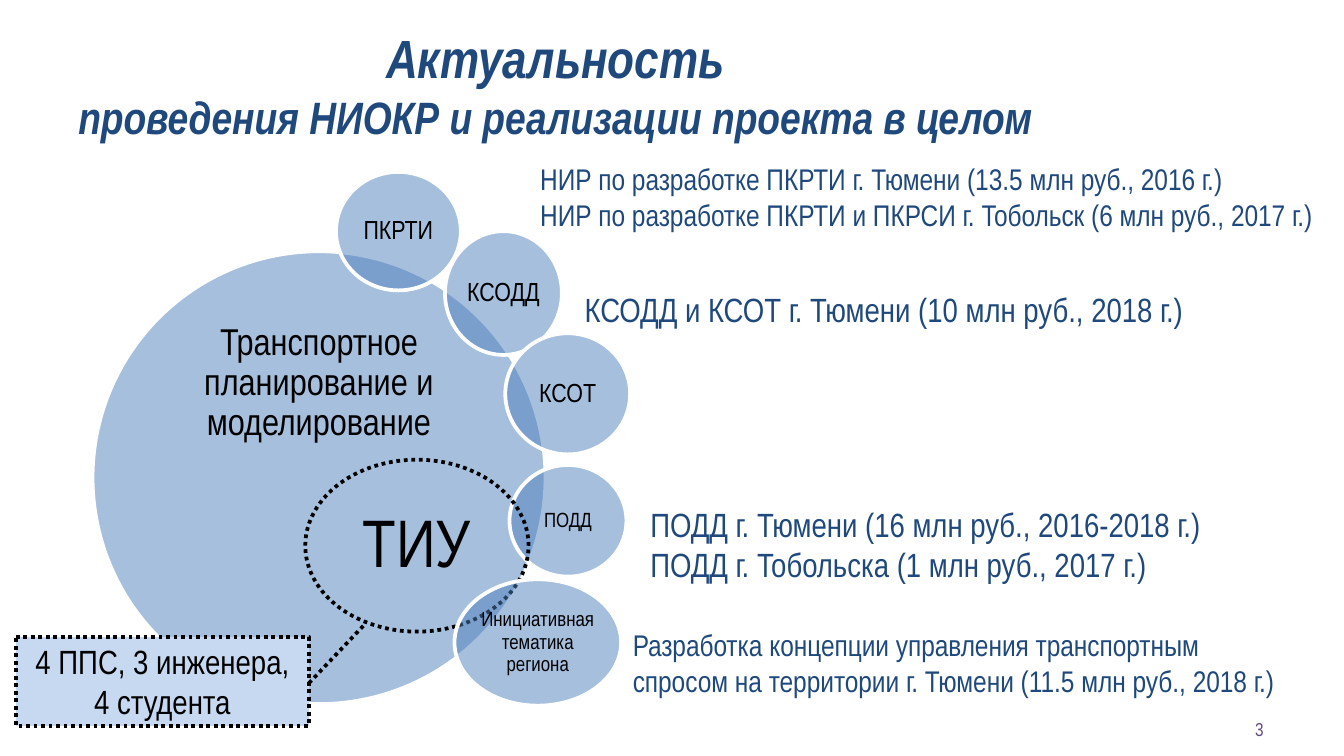
from pptx import Presentation
from pptx.dml.color import RGBColor
from pptx.enum import dml, shapes, text
from pptx.oxml.ns import qn
from pptx.util import Cm, Pt
from lxml import etree

NAVY, BLACK, WHITE = "1F497D", "000000", "FFFFFF"
BLUE, PALE, PURPLE = "4F81BD", "C6D9F1", "604A7B"
FONT = "Arial Narrow"

heading = [("Актуальность", 28.8), ("проведения НИОКР и реализации проекта в целом", 24.3)]
topics = [
    ("Транспортное планирование и моделирование", 20, (1.75, 4.75, 8.56, 8.56)),
    ("ПКРТИ", 14, (6.35, 3.25, 2.36, 2.24)),
    ("КСОДД", 14, (8.41, 4.37, 2.21, 2.34)),
    ("ПОДД", 11, (9.63, 8.79, 2.21, 2.11)),
    ("ТИУ", 36, (5.77, 8.69, 4.22, 3.25)),
    ("Инициативная тематика региона", 11, (8.59, 10.95, 3.15, 2.39)),
    ("КСОТ", 14, (9.55, 6.3, 2.36, 2.29)),
]
main_topic, university = topics[0][0], "ТИУ"
projects = [
    (["НИР по разработке ПКРТИ г. Тюмени (13.5 млн руб., 2016 г.)",
      "НИР по разработке ПКРТИ и ПКРСИ г. Тобольск (6 млн руб., 2017 г.)"],
     16, (9.96, 2.92, 15.82, 1.63)),
    (["КСОДД и КСОТ г. Тюмени (10 млн руб., 2018 г.)"], 18, (10.8, 5.33, 12.22, 1.02)),
    (["Разработка концепции управления транспортным",
      "спросом на территории г. Тюмени (11.5 млн руб., 2018 г.)"],
     16, (11.71, 11.73, 13.69, 1.63)),
    (["ПОДД г. Тюмени (16 млн руб., 2016-2018 г.)",
      "ПОДД г. Тобольска (1 млн руб., 2017 г.)"], 18, (12.04, 9.4, 11.25, 1.8)),
]
team = ("4 ППС, 3 инженера, 4 студента", 18, (0.3, 12.04, 5.54, 1.68))
team_pointer = (0.52, 1, -0.14, 1.19)
page_number = ("3", 10, (18.21, 13.41, 5.92, 0.76))


def rgb(value):
    return RGBColor.from_string(value)


def box(lengths):
    return [Cm(length) for length in lengths]


def write(frame, lines, size, color, align, anchor=text.MSO_ANCHOR.MIDDLE):
    frame.text = "\n".join(lines)
    frame.word_wrap = True
    frame.vertical_anchor = anchor
    for paragraph in frame.paragraphs:
        paragraph.alignment = align
        for run in paragraph.runs:
            run.font.name, run.font.size = FONT, Pt(size)
            run.font.color.rgb = rgb(color)


def add_figure(slide, preset, place, fill, line, dotted=False, alpha=None):
    figure = slide.shapes.add_shape(preset, *box(place))
    figure.shadow.inherit = False
    if fill:
        figure.fill.solid()
        figure.fill.fore_color.rgb = rgb(fill)
    else:
        figure.fill.background()
    if alpha:
        color = figure.fill._xPr.find(qn("a:solidFill"))[0]
        etree.SubElement(color, qn("a:alpha")).set("val", str(alpha * 1000))
    figure.line.color.rgb = rgb(line)
    figure.line.width = Pt(2)
    if dotted:
        figure.line.dash_style = dml.MSO_LINE.ROUND_DOT
    return figure


def add_heading(slide):
    title = slide.shapes.title
    title.left, title.top, title.width, title.height = box((0, 0.33, 21, 2.51))
    frame = title.text_frame
    write(frame, ["\v".join(line for line, _ in heading)], heading[0][1], NAVY,
          text.PP_ALIGN.CENTER)
    for run, (_, size) in zip(frame.paragraphs[0].runs, heading):
        run.font.size = Pt(size)
        run.font.bold = run.font.italic = True


def add_topic(slide, name, size, place):
    outlined = name == university
    circle = add_figure(slide, shapes.MSO_SHAPE.OVAL, place,
                        None if outlined else BLUE, BLACK if outlined else WHITE,
                        dotted=outlined, alpha=None if outlined else 50)
    frame = circle.text_frame
    frame.margin_left = frame.margin_right = frame.margin_top = frame.margin_bottom = 0
    anchor = text.MSO_ANCHOR.TOP if name == main_topic else text.MSO_ANCHOR.MIDDLE
    write(frame, [name], size, BLACK, text.PP_ALIGN.CENTER, anchor)
    frame.paragraphs[0].line_spacing = 0.9
    if name == main_topic:
        frame.margin_top = Cm(0.1)


def add_note(slide, lines, size, place, color, align, anchor):
    note = slide.shapes.add_textbox(*box(place))
    write(note.text_frame, lines, size, color, align, anchor)


def main():
    deck = Presentation()
    deck.slide_width, deck.slide_height = Cm(25.4), Cm(14.29)
    slide = deck.slides.add_slide(deck.slide_layouts[5])

    number, size, place = page_number
    add_note(slide, [number], size, place, PURPLE, text.PP_ALIGN.RIGHT, text.MSO_ANCHOR.MIDDLE)
    add_heading(slide)
    for topic in topics:
        add_topic(slide, *topic)
    for project in projects:
        add_note(slide, *project, NAVY, text.PP_ALIGN.LEFT, text.MSO_ANCHOR.TOP)

    staff, size, place = team
    callout = add_figure(slide, shapes.MSO_SHAPE.LINE_CALLOUT_1, place, PALE, BLACK, dotted=True)
    for index, value in enumerate(team_pointer):
        callout.adjustments[index] = value
    write(callout.text_frame, [staff], size, BLACK, text.PP_ALIGN.CENTER)

    deck.save("out.pptx")


if __name__ == "__main__":
    main()
